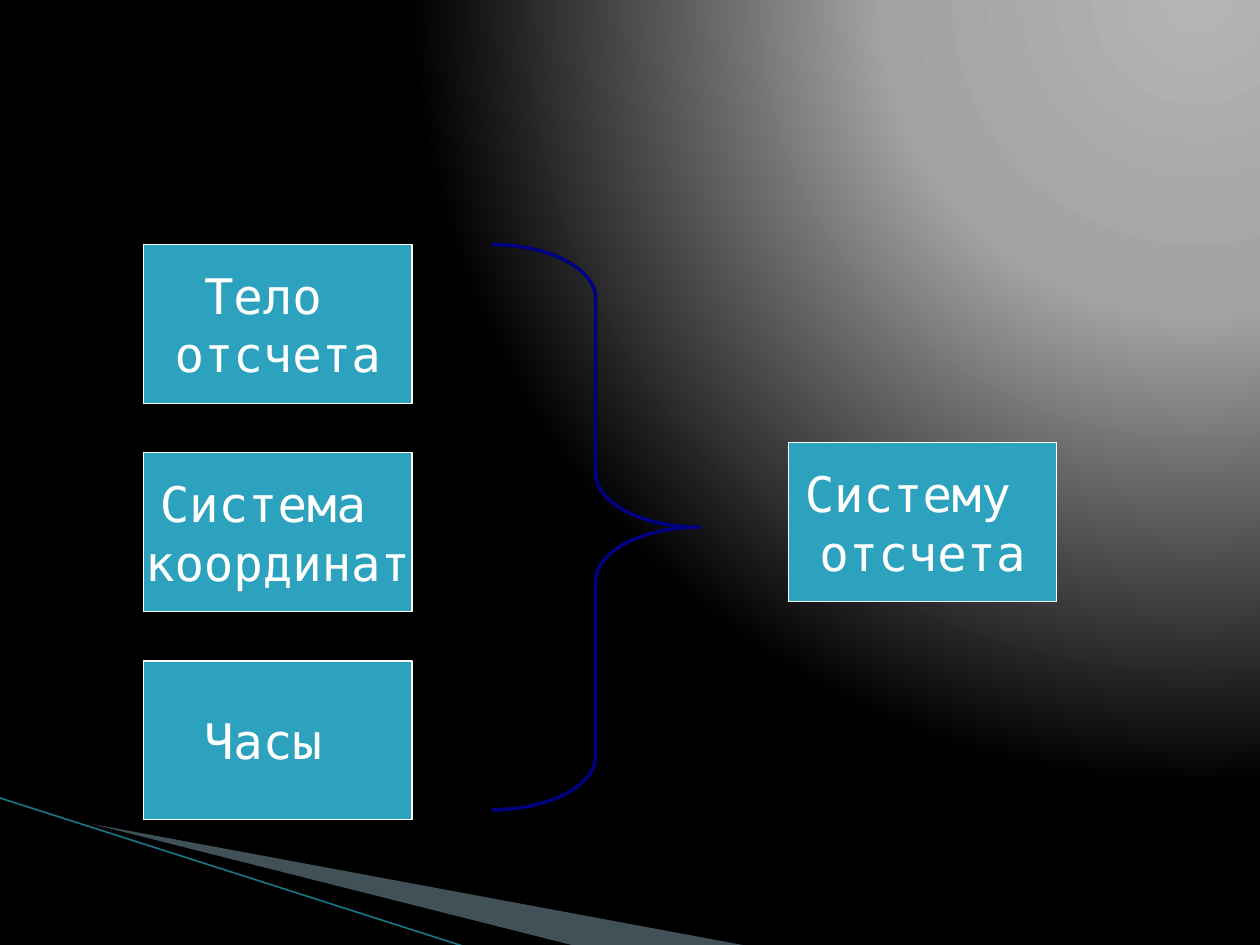
"""Build a slide showing the three parts that form a frame of reference."""
from lxml import etree
from pptx import Presentation, util as u
from pptx.dml.color import RGBColor
from pptx.enum import shapes as sh, text as tx
from pptx.oxml import parse_xml
from pptx.oxml.ns import nsdecls, qn

BLACK = RGBColor(0x00, 0x00, 0x00)
WHITE = RGBColor(0xFF, 0xFF, 0xFF)
TEAL = RGBColor(0x2D, 0xA2, 0xBF)
NAVY = RGBColor(0x00, 0x00, 0x80)
MIST = RGBColor(0xA0, 0xCB, 0xDC)
SEA = RGBColor(0x1A, 0x72, 0x85)

PARTS = [["Тело ", "отсчета"], ["Система ", "координат"], ["Часы "]]
WHOLE = ["Систему ", "отсчета"]
WEDGES = [
    (MIST, 40, [(39.6, 468.4), (428.4, 540.7), (328.3, 540.7), (39.6, 468)]),
    (BLACK, 100, [(38.2, 467.3), (329, 540.7), (267.8, 541.4), (38.9, 468)]),
]
STOPS = [(0, RGBColor(0xB4, 0xB4, 0xB4)), (40, RGBColor(0xA2, 0xA2, 0xA2)), (100, BLACK)]
FOCUS = {"l": 95, "t": -106, "r": 5, "b": 206}
FONT = {"name": "DejaVu Sans Mono", "size": u.Pt(28)}
FRAME = {"word_wrap": False, "vertical_anchor": tx.MSO_ANCHOR.MIDDLE}
LEFT, TOP, STEP = 82, 139.75, 119
WIDE, HIGH = 153.4, 90.7


def apply(item, values):
    for key, value in values.items():
        setattr(item, key, value)


def paint(slide):
    slide.background.fill.solid()
    stops = "".join(f'<a:gs pos="{pos * 1000}"><a:srgbClr val="{tone}"/></a:gs>' for pos, tone in STOPS)
    rect = " ".join(f'{side}="{value * 1000}"' for side, value in FOCUS.items())
    grad = parse_xml(
        f'<a:gradFill {nsdecls("a")} rotWithShape="1"><a:gsLst>{stops}</a:gsLst>'
        f'<a:path path="circle"><a:fillToRect {rect}/></a:path></a:gradFill>')
    old = next(slide.element.iter(qn("p:bgPr")))[0]
    old.getparent().replace(old, grad)


def wedge(slide, tone, alpha, points):
    scale = u.Pt(1) / 10
    (x, y), *rest = [(round(a * 10), round(b * 10)) for a, b in points]
    form = slide.shapes.build_freeform(x, y, scale=scale)
    form.add_line_segments(rest, close=True)
    shape = form.convert_to_shape()
    shape.shadow.inherit = False
    shape.fill.solid()
    shape.fill.fore_color.rgb = tone
    shape.line.fill.background()
    if alpha < 100:
        color = next(shape.element.spPr.iter(qn("a:srgbClr")))
        etree.SubElement(color, qn("a:alpha"), val=str(alpha * 1000))


def stroke(line, tone, width):
    line.color.rgb = tone
    line.width = u.Pt(width)


def box(slide, left, top, lines):
    shape = slide.shapes.add_shape(
        sh.MSO_SHAPE.RECTANGLE, u.Pt(left), u.Pt(top), u.Pt(WIDE), u.Pt(HIGH))
    shape.shadow.inherit = False
    shape.fill.solid()
    shape.fill.fore_color.rgb = TEAL
    stroke(shape.line, WHITE, 0.75)
    frame = shape.text_frame
    apply(frame, FRAME)
    for num, words in enumerate(lines):
        para = frame.add_paragraph() if num else frame.paragraphs[0]
        para.alignment = tx.PP_ALIGN.CENTER
        run = para.add_run()
        run.text = words
        apply(run.font, FONT)
        run.font.color.rgb = WHITE


def main():
    deck = Presentation()
    apply(deck, {"slide_width": u.Pt(720), "slide_height": u.Pt(540)})
    slide = deck.slides.add_slide(deck.slide_layouts[6])
    paint(slide)
    for item in WEDGES:
        wedge(slide, *item)
    edge = slide.shapes.add_connector(
        sh.MSO_CONNECTOR.STRAIGHT, u.Pt(-0.7), u.Pt(455.8), u.Pt(267), u.Pt(541.4))
    stroke(edge.line, SEA, 0.95)
    etree.SubElement(edge.element.spPr, qn("a:effectLst"))
    for row, lines in enumerate(PARTS):
        box(slide, LEFT, TOP + row * STEP, lines)
    box(slide, 450.5, 253, WHOLE)
    brace = slide.shapes.add_shape(
        sh.MSO_SHAPE.RIGHT_BRACE, u.Pt(281), u.Pt(TOP), u.Pt(118.8), u.Pt(323))
    brace.shadow.inherit = False
    brace.fill.background()
    brace.adjustments[0] = 0.26
    brace.adjustments[1] = 0.5
    stroke(brace.line, NAVY, 2)
    deck.save("out.pptx")


if __name__ == "__main__":
    main()
